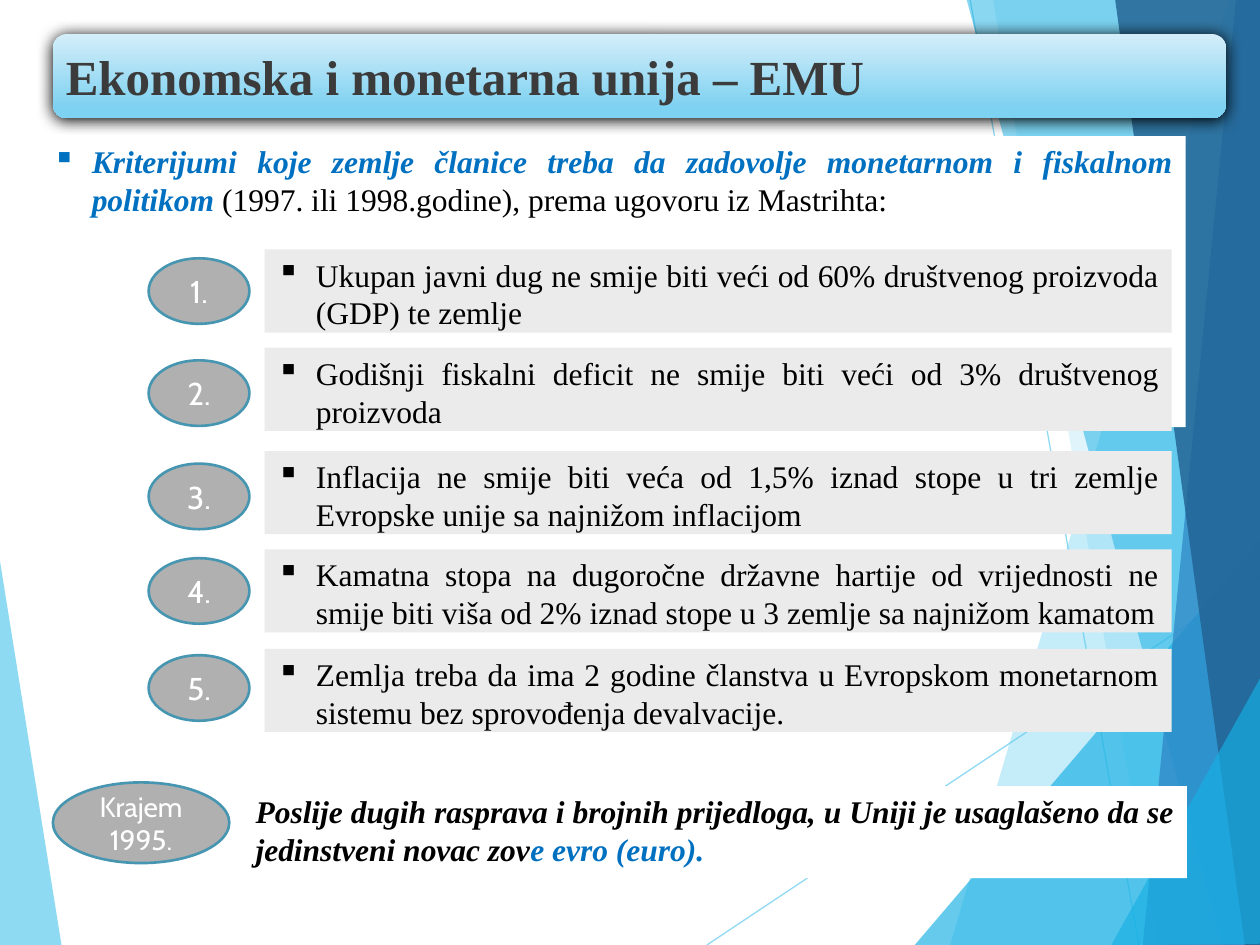
import pptx
import pptx.util
import pptx.dml.color
import pptx.enum.shapes
import pptx.enum.text
from pptx.oxml.ns import qn
from lxml import etree

SHAPE = pptx.enum.shapes.MSO_SHAPE
ALIGN = pptx.enum.text.PP_ALIGN
ANCHOR = pptx.enum.text.MSO_ANCHOR
SERIF, SANS = "Times New Roman", "Cabin"
BLUE, BLACK, WHITE = "0070C0", "000000", "FFFFFF"

W, H = pptx.util.Inches(10), pptx.util.Inches(7.5)
COLS, ROWS = 10, 7.5

# Decorative facets, back to front: colour, opacity in percent, corners
LEFT_FACET = ("5FCBEF", 70, [(-0.01, 4.39), (0.49, 7.51), (-0.01, 7.5)])
RIGHT_FACETS = [
    ("5FCBEF", 36, [(9.75, 0), (7.54, 7.5), (10.02, 7.51), (10.01, 0.01)]),
    ("5FCBEF", 20, [(7.88, -0.01), (9.19, 7.5), (10.01, 7.5), (10.01, -0.01)]),
    ("17B0E4", 66, [(7.26, 7.5), (10, 4.29), (10.01, 7.5)]),
    ("17B0E4", 50, [(7.67, -0.01), (9.7, 7.5), (10.01, 7.49), (10.01, -0.01)]),
    ("2E83C3", 70, [(9.81, -0.01), (9.07, 7.5), (10.01, 7.5), (10, -0.01)]),
    ("226292", 82, [(8.85, -0.01), (9.88, 7.5), (10.02, 7.5), (10, -0.01)]),
    ("17B0E4", 66, [(8.82, 7.5), (10.02, 5.35), (10.02, 7.49)]),
]
RAYS = [((5.61, 7.5), (10.01, 4.57)), ((7.7, 0), (9.04, 7.5))]

# Top of the bar, top of its number, wording
CRITERIA = [
    (1.98, 2.05, "Ukupan javni dug ne smije biti veći od 60% društvenog proizvoda "
                 "(GDP) te zemlje"),
    (2.76, 2.86, "Godišnji fiskalni deficit ne smije biti veći od 3% društvenog "
                 "proizvoda"),
    (3.58, 3.68, "Inflacija ne smije biti veća od 1,5% iznad stope u tri zemlje "
                 "Evropske unije sa najnižom inflacijom"),
    (4.36, 4.43, "Kamatna stopa na dugoročne državne hartije od vrijednosti ne "
                 "smije biti viša od 2% iznad stope u 3 zemlje sa najnižom kamatom"),
    (5.15, 5.20, "Zemlja treba da ima 2 godine članstva u Evropskom monetarnom "
                 "sistemu bez sprovođenja devalvacije."),
]


def x(col):
    return round(W * col / COLS)


def y(row):
    return round(H * row / ROWS)


def rgb(value):
    return pptx.dml.color.RGBColor.from_string(value)


def set_alpha(color_format_parent, percent):
    """Make the one solid colour below this element partly transparent."""
    clr = color_format_parent.find(".//" + qn("a:srgbClr"))
    etree.SubElement(clr, qn("a:alpha"), val=str(percent * 1000))


def add_facet(s, color, opacity, corners):
    points = [(x(c), y(r)) for c, r in corners]
    fb = s.shapes.build_freeform(*points[0], scale=1.0)
    fb.add_line_segments(points[1:], close=True)
    sp = fb.convert_to_shape()
    sp.shadow.inherit = False
    sp.fill.solid()
    sp.fill.fore_color.rgb = rgb(color)
    set_alpha(sp._element.spPr, opacity)
    sp.line.fill.background()


def add_ray(s, start, end):
    cx = s.shapes.add_connector(pptx.enum.shapes.MSO_CONNECTOR.STRAIGHT,
                                x(start[0]), y(start[1]), x(end[0]), y(end[1]))
    cx.line.color.rgb = rgb("5FCBEF")
    cx.line.width = pptx.util.Pt(0.75)
    set_alpha(cx._element.spPr, 70)
    etree.SubElement(cx._element.spPr, qn("a:effectLst"))


def add_box(s, kind, box, fill, line=None):
    left, top, width, height = box
    sp = s.shapes.add_shape(kind, x(left), y(top), x(width), y(height))
    sp.shadow.inherit = False
    sp.fill.solid()
    sp.fill.fore_color.rgb = rgb(fill)
    if line:
        sp.line.color.rgb = rgb(line)
        sp.line.width = pptx.util.Pt(1.5)
    else:
        sp.line.fill.background()
    return sp


def write(sp, runs, size, font=SERIF, align=ALIGN.JUSTIFY, anchor=ANCHOR.TOP,
          bullet=False):
    """Fill a shape with one paragraph; runs are (text, colour, bold, italic)."""
    tf = sp.text_frame
    tf.word_wrap = True
    tf.vertical_anchor = anchor
    p = tf.paragraphs[0]
    p.alignment = align
    if bullet:
        pPr = p._p.get_or_add_pPr()
        indent = x(0.31)
        pPr.set("marL", str(indent))
        pPr.set("indent", str(-indent))
        etree.SubElement(pPr, qn("a:buChar"), char="▪")
    for text, color, bold, italic in runs:
        r = p.add_run()
        r.text = text
        r.font.name = font
        r.font.size = pptx.util.Pt(size)
        r.font.bold = bold
        r.font.italic = italic
        r.font.color.rgb = rgb(color)


def add_oval(s, box, text, size):
    sp = add_box(s, SHAPE.OVAL, box, "B0B0B0", "4696B1")
    write(sp, [(text, WHITE, False, False)], size, SANS, ALIGN.CENTER, ANCHOR.MIDDLE)


def add_title(s, text):
    sp = add_box(s, SHAPE.ROUNDED_RECTANGLE, (0.42, 0.27, 9.31, 0.67), "D4EEF9")
    sp.fill.gradient()
    sp.fill.gradient_angle = 270
    for stop, (position, color) in zip(sp.fill.gradient_stops,
                                       [(0, "D4EEF9"), (0.88, "7DD1F1")]):
        stop.position = position
        stop.color.rgb = rgb(color)
    shadow = etree.SubElement(sp._element.spPr.find(qn("a:effectLst")),
                              qn("a:outerShdw"), blurRad=str(pptx.util.Pt(8.5)),
                              dist=str(pptx.util.Pt(1)), dir="5400000", rotWithShape="0")
    etree.SubElement(shadow, qn("a:srgbClr"), val=BLACK)
    tf = sp.text_frame
    tf.margin_left = tf.margin_right = x(0.07)
    tf.margin_top = tf.margin_bottom = y(0.04)
    write(sp, [(text, "3B3B3B", True, False)], 28, align=ALIGN.LEFT,
          anchor=ANCHOR.MIDDLE)


def add_background(s):
    add_facet(s, *LEFT_FACET)
    for start, end in RAYS:
        add_ray(s, start, end)
    for facet in RIGHT_FACETS:
        add_facet(s, *facet)


def main():
    prs = pptx.Presentation()
    prs.slide_width, prs.slide_height = W, H
    s = prs.slides.add_slide(prs.slide_layouts[6])
    add_background(s)
    add_title(s, "Ekonomska i monetarna unija – EMU")

    intro = add_box(s, SHAPE.RECTANGLE, (0.32, 1.08, 9.09, 2.31), WHITE)
    write(intro, [
        ("Kriterijumi koje zemlje članice treba da zadovolje monetarnom i "
         "fiskalnom politikom ", BLUE, True, True),
        ("(1997. ili 1998.godine), prema ugovoru iz Mastrihta:", BLACK, False, False),
    ], 18, bullet=True)

    for number, (bar_top, oval_top, text) in enumerate(CRITERIA, 1):
        bar = add_box(s, SHAPE.RECTANGLE, (2.1, bar_top, 7.2, 0.66), "EBEBEB")
        write(bar, [(text, BLACK, False, False)], 18, bullet=True)
        add_oval(s, (1.18, oval_top, 0.8, 0.52), f"{number}.", 18)

    outcome = add_box(s, SHAPE.RECTANGLE, (1.93, 6.24, 7.49, 0.73), WHITE)
    write(outcome, [
        ("Poslije dugih rasprava i brojnih prijedloga, u Uniji je usaglašeno da se "
         "jedinstveni novac zov", BLACK, True, True),
        ("e evro (euro).", BLUE, True, True),
    ], 18)
    add_oval(s, (0.42, 6.21, 1.4, 0.64), "Krajem 1995.", 16)

    prs.save("out.pptx")


if __name__ == "__main__":
    main()
